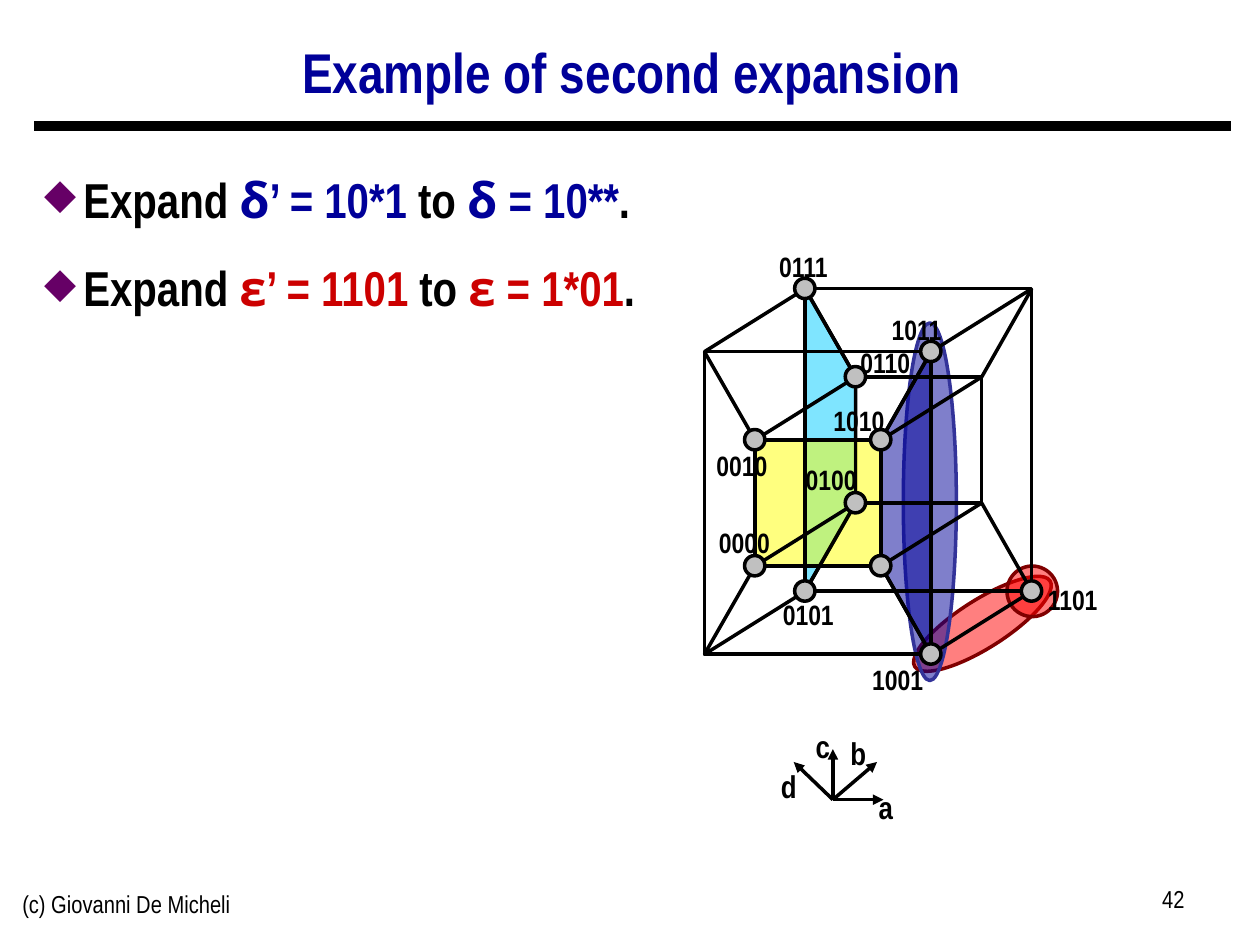
from itertools import product

from lxml import etree
from pptx import Presentation
from pptx import util as u
from pptx.dml.color import RGBColor
from pptx.enum import shapes, text
from pptx.oxml import ns

COLORS = {
    "black": "000000", "navy": "000099", "indigo": "333399", "crimson": "CC0000",
    "red": "FF0000", "maroon": "800000", "purple": "660066", "cyan": "00CCFF",
    "yellow": "FFFF00", "gray": "C0C0C0",
}
FONT = "Arial Narrow"
GREEK_FONT = "Noto Sans"
LABEL_OFFSETS = {
    "1001": (-1.45, 0.05), "0111": (-0.81, -0.91), "1011": (-1.07, -0.91),
    "0110": (-0.18, -0.76), "0010": (-1.04, 0.05), "0000": (-0.99, -0.94),
    "0101": (-0.71, 0), "1101": (0.05, -0.3), "0100": (-1.27, -0.94),
    "1010": (-1.22, -0.86),
}
NODES = [*LABEL_OFFSETS, "1000"]


def rgb(name):
    return RGBColor.from_string(COLORS[name])


def add_element(parent, tag, **attributes):
    return etree.SubElement(parent, ns.qn(tag), attributes)


def format_run(run, size, color="black", bold=False, font=FONT):
    run.font.size = u.Pt(size)
    run.font.bold = bold
    run.font.name = font
    run.font.color.rgb = rgb(color)


def add_text(slide, box, content, size, color="black", bold=False,
             align=text.PP_ALIGN.LEFT, wrap=True):
    shape = slide.shapes.add_textbox(*map(u.Cm, box))
    shape.text_frame.text = content
    shape.text_frame.word_wrap = wrap
    paragraph = shape.text_frame.paragraphs[0]
    paragraph.alignment = align
    format_run(paragraph.runs[0], size, color, bold)
    return shape


def add_label(slide, box, content, size):
    shape = add_text(slide, box, content, size, bold=True,
                     align=text.PP_ALIGN.CENTER, wrap=False)
    shape.text_frame.auto_size = text.MSO_AUTO_SIZE.SHAPE_TO_FIT_TEXT


def add_line(slide, start, end, width=2, arrow=False):
    connector = slide.shapes.add_connector(
        shapes.MSO_CONNECTOR.STRAIGHT, *map(u.Cm, (*start, *end)))
    connector.line.width = u.Pt(width)
    connector.line.color.rgb = rgb("black")
    if arrow:
        add_element(connector.line._get_or_add_ln(), "a:tailEnd", type="triangle")
    add_element(connector._element.spPr, "a:effectLst")


def style_shape(shape, fill=None, line="black", alpha=None):
    shape.shadow.inherit = False
    shape.line.width = u.Pt(2)
    shape.line.color.rgb = rgb(line)
    if fill is None:
        shape.fill.background()
        return
    shape.fill.solid()
    shape.fill.fore_color.rgb = rgb(fill)
    if alpha:
        color = shape._element.spPr.find(ns.qn("a:solidFill"))[0]
        add_element(color, "a:alpha", val=str(alpha * 1000))


def add_preset(slide, kind, box, fill=None, line="black", alpha=None, rotation=0):
    shape = slide.shapes.add_shape(kind, *map(u.Cm, box))
    shape.rotation = rotation
    style_shape(shape, fill, line, alpha)


def add_header(slide, box):
    left, top, width, height = box
    title = add_text(slide, box, "Example of second expansion", 32, "navy", True,
                     text.PP_ALIGN.CENTER)
    title.text_frame.vertical_anchor = text.MSO_ANCHOR.MIDDLE
    title.text_frame.paragraphs[0].line_spacing = 0.9
    rule = top + height + 0.08
    add_line(slide, (left + 0.03, rule), (left + width, rule), 6)


def add_bullets(slide, box):
    shape = slide.shapes.add_textbox(*map(u.Cm, box))
    frame = shape.text_frame
    frame.word_wrap = True
    items = [
        ("δ", "’ = 10*1", " = 10**", "navy"),
        ("ε", "’ = 1101", " = 1*01", "crimson"),
    ]
    for index, (letter, before, after, color) in enumerate(items):
        paragraph = frame.add_paragraph() if index else frame.paragraphs[0]
        paragraph.line_spacing = 1.25
        paragraph.space_before = u.Pt(8.4)
        pieces = [
            ("Expand ", "black", FONT), (letter, color, GREEK_FONT),
            (before, color, FONT), (" to ", "black", FONT),
            (letter, color, GREEK_FONT), (after, color, FONT), (".", "black", FONT),
        ]
        for content, piece_color, font in pieces:
            run = paragraph.add_run()
            run.text = content
            format_run(run, 28, piece_color, True, font)
        properties = paragraph._p.get_or_add_pPr()
        properties.set("marL", str(u.Cm(0.79)))
        properties.set("indent", str(u.Cm(-0.79)))
        bullet_color = add_element(properties, "a:buClr")
        add_element(bullet_color, "a:srgbClr", val=COLORS["purple"])
        add_element(properties, "a:buSzPct", val="85000")
        add_element(properties, "a:buChar", char="◆")


def cube_vertex(box, code):
    left, top = box[:2]
    a, b, c, d = map(int, code)
    inset_x, inset_y, width, height = (0, 0, 4.57, 6.1) if d else (1.02, 1.78, 2.54, 2.54)
    return (left + inset_x + width * a + 2.03 * b,
            top + inset_y + height * (1 - c) + 1.27 * (1 - b))


def add_implicants(slide, box):
    left, top = box[:2]
    for x, y, width, height, fill, line, rotation in [
        (3.99, 6.27, 3.23, 0.97, "red", "maroon", 327.6),
        (4.01, 0.69, 1.07, 7.21, "navy", "indigo", 0),
        (6.1, 5.59, 1.02, 1.02, "red", "maroon", 327.6),
    ]:
        add_preset(slide, shapes.MSO_SHAPE.OVAL, (left + x, top + y, width, height),
                   fill, line, 50, rotation)


def add_faces(slide, box):
    for fill, codes in [
        ("cyan", ("0101", "0100", "0110", "0111")),
        ("yellow", ("0000", "1000", "1010", "0010")),
        ("navy", ("1011", "1010", "1000", "1001")),
    ]:
        corners = [tuple(map(u.Cm, cube_vertex(box, code))) for code in codes]
        builder = slide.shapes.build_freeform(*corners[0])
        builder.add_line_segments(corners[1:], close=True)
        style_shape(builder.convert_to_shape(), fill, alpha=50)


def add_hypercube(slide, box):
    add_faces(slide, box)
    for b, d in product("01", repeat=2):
        left, top = cube_vertex(box, f"0{b}1{d}")
        right, bottom = cube_vertex(box, f"1{b}0{d}")
        add_preset(slide, shapes.MSO_SHAPE.RECTANGLE,
                   (left, top, right - left, bottom - top))
    for a, c, other in product("01", repeat=3):
        for start, end in [(f"{a}0{c}{other}", f"{a}1{c}{other}"),
                           (f"{a}{other}{c}0", f"{a}{other}{c}1")]:
            add_line(slide, cube_vertex(box, start), cube_vertex(box, end))
    for code, (shift_x, shift_y) in LABEL_OFFSETS.items():
        x, y = cube_vertex(box, code)
        add_label(slide, (x + shift_x, y + shift_y, 1.55, 0.94), code, 16)
    for code in NODES:
        x, y = cube_vertex(box, code)
        add_preset(slide, shapes.MSO_SHAPE.OVAL, (x - 0.21, y - 0.21, 0.41, 0.41), "gray")


def add_axes(slide, box):
    left, top = box[:2]
    origin = (left + 1.3, top + 1.59)
    for name, (reach_x, reach_y), (x, y) in [
        ("a", (1.02, 0), (1.96, 1.24)),
        ("b", (0.89, -0.76), (1.4, 0.15)),
        ("c", (0, -1.02), (0.69, 0)),
        ("d", (-0.79, -0.76), (0, 0.81)),
    ]:
        add_line(slide, origin, (origin[0] + reach_x, origin[1] + reach_y), arrow=True)
        add_label(slide, (left + x, top + y, 0.82, 1.02), name, 18)


def add_footer(slide, box):
    left, top, width, height = box
    add_text(slide, (left, top + 0.1, 8.05, height), "(c) Giovanni De Micheli", 14)
    add_text(slide, (left + width - 5.92, top, 5.92, height), "42", 14,
             align=text.PP_ALIGN.RIGHT)


def main():
    presentation = Presentation()
    presentation.slide_width = u.Cm(25.4)
    presentation.slide_height = u.Cm(19.05)
    slide = presentation.slides.add_slide(presentation.slide_layouts[6])
    cube_box = (14.2, 5.82, 6.6, 7.37)
    add_header(slide, (0.66, 0.56, 24.16, 1.9))
    add_footer(slide, (0.2, 17.7, 23.93, 1.32))
    add_implicants(slide, cube_box)
    add_bullets(slide, (0.64, 3, 24.16, 14.45))
    add_axes(slide, (15.49, 14.53, 2.78, 2.26))
    add_hypercube(slide, cube_box)
    presentation.save("out.pptx")


if __name__ == "__main__":
    main()
